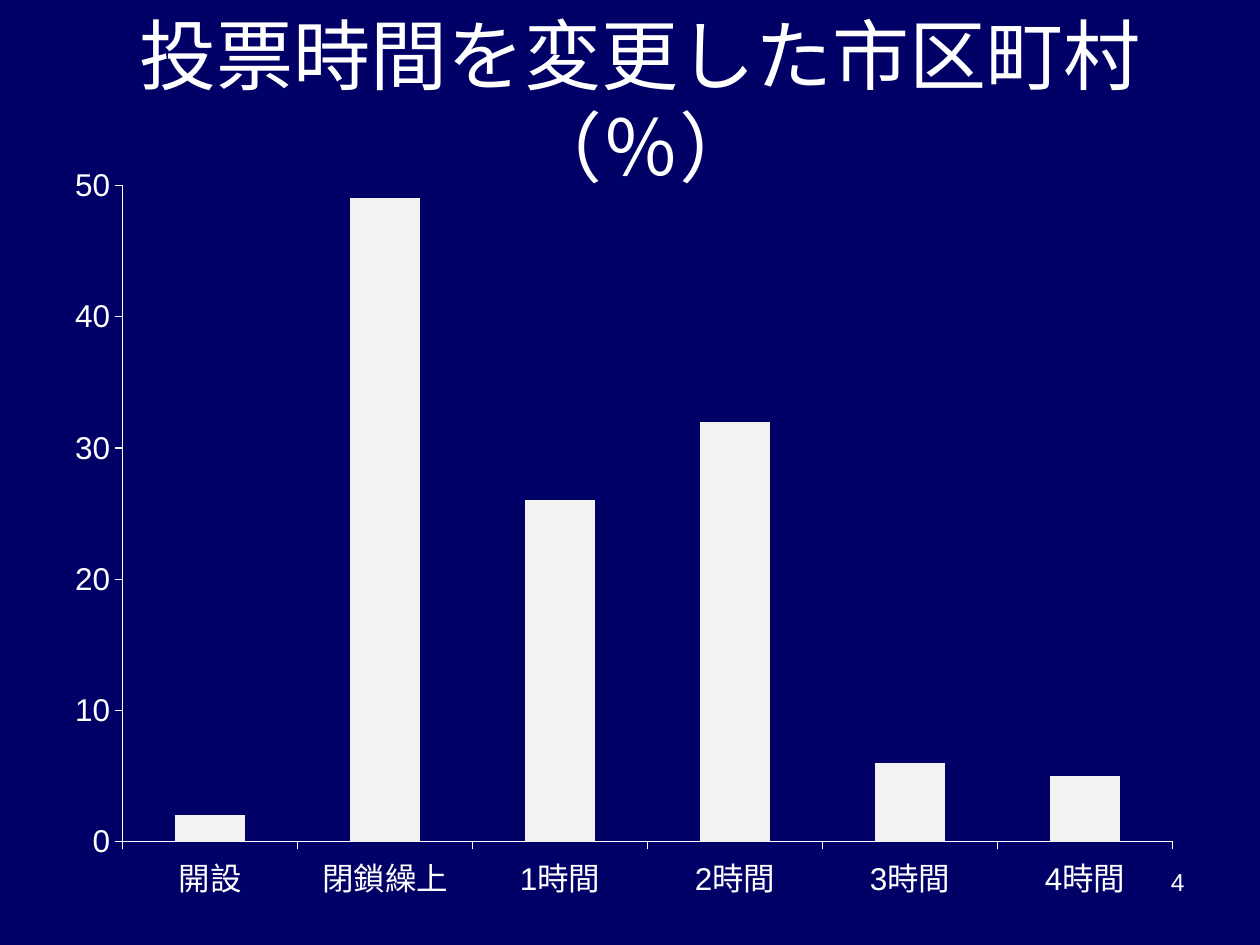
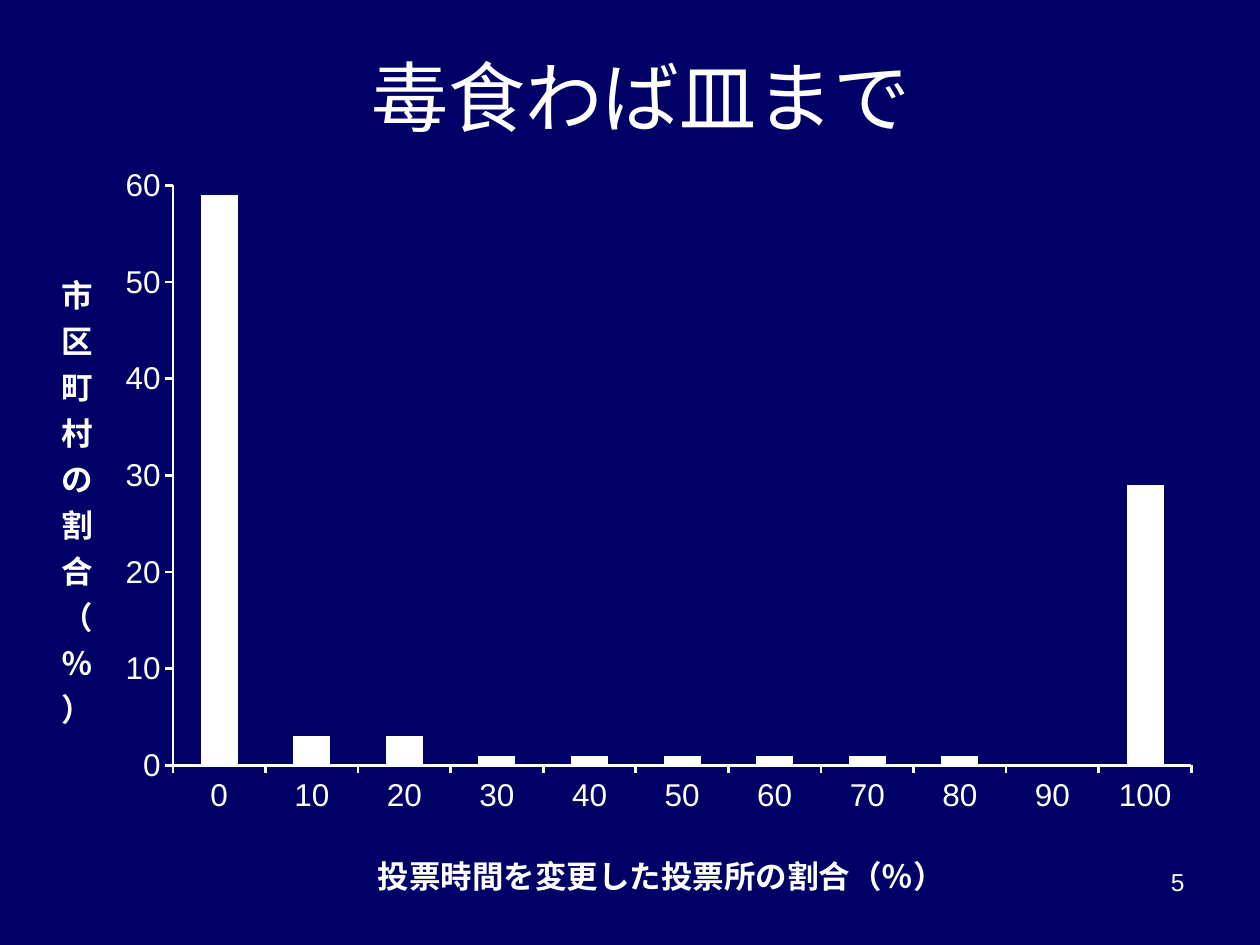
import pptx
import pptx.chart.data
import pptx.dml.color
import pptx.enum.chart
import pptx.enum.text
import pptx.oxml
import pptx.oxml.ns
import pptx.util
from pptx.util import Cm

NAVY = pptx.dml.color.RGBColor(0x00, 0x00, 0x66)
WHITE = pptx.dml.color.RGBColor(0xFF, 0xFF, 0xFF)
PALE_GREY = pptx.dml.color.RGBColor(0xF2, 0xF2, 0xF2)
FONT = "Arial"

# Content: boxes are left, top, width, height in cm; plot and title places are
# fractions of the chart
SLIDES = [
    {
        "title": "投票時間を変更した市区町村（％）",
        "title_box": (1.3, 0.53, 23.24, 2.97),
        "number": "4",
        "chart_box": (1.09, 3.12, 23.01, 15.39),
        "plot": (0.06, 0.04, 0.92, 0.86),
        "bar_color": PALE_GREY,
        "axis_width": 0.75,
        "maximum": 50,
        "values": {"開設": 2, "閉鎖繰上": 49, "1時間": 26,
                   "2時間": 32, "3時間": 6, "4時間": 5},
        "axis_titles": {},
    },
    {
        "title": "毒食わば皿まで",
        "title_box": (1.5, 0.33, 22.86, 3.18),
        "number": "5",
        "chart_box": (0.89, 3.12, 23.6, 15.39),
        "plot": (0.11, 0.04, 0.87, 0.76),
        "bar_color": WHITE,
        "axis_width": 1.5,
        "maximum": 60,
        "values": dict(zip(map(str, range(0, 101, 10)),
                           [59, 3, 3, 1, 1, 1, 1, 1, 1, 0, 29])),
        "axis_titles": {
            "category_axis": ("投票時間を変更した投票所の割合（％）", (0.28, 0.9), "horz"),
            "value_axis": ("市区町村の割合（％）", (0.01, 0.14), "wordArtVert"),
        },
    },
]
NUMBER_BOX = (18.21, 17.35, 5.92, 1.32)


def apply(target, formats):
    for name, value in formats.items():
        setattr(target, name, value)


def style_font(font, size, bold=False):
    apply(font, {"name": FONT, "size": pptx.util.Pt(size), "bold": bold})
    font.color.rgb = WHITE


def add_text(slide, box, text, size, alignment, anchor):
    shape = slide.shapes.add_textbox(*map(Cm, box))
    apply(shape.text_frame, {"word_wrap": True, "vertical_anchor": anchor})
    paragraph = shape.text_frame.paragraphs[0]
    apply(paragraph, {"text": text, "alignment": alignment})
    style_font(paragraph.runs[0].font, size)


def set_layout(element, index, place, inner=False):
    """Fix the position (and size, if given) of a chart part."""
    for old in element.findall(pptx.oxml.ns.qn("c:layout")):
        element.remove(old)
    target = '<c:layoutTarget val="inner"/>' if inner else ""
    modes = '<c:xMode val="edge"/><c:yMode val="edge"/>'
    sizes = "".join(f'<c:{key} val="{value}"/>' for key, value in zip("xywh", place))
    element.insert(index, pptx.oxml.parse_xml(
        f'<c:layout {pptx.oxml.ns.nsdecls("c")}><c:manualLayout>'
        f"{target}{modes}{sizes}</c:manualLayout></c:layout>"))


def add_axis_title(axis, text, place, direction):
    frame = axis.axis_title.text_frame
    frame.text = text
    style_font(frame.paragraphs[0].runs[0].font, 18, bold=True)
    body = frame._txBody.find(pptx.oxml.ns.qn("a:bodyPr"))
    body.set("rot", "0")
    body.set("vert", direction)
    set_layout(axis.axis_title._element, 1, place)


def add_column_chart(slide, content):
    data = pptx.chart.data.CategoryChartData()
    data.categories = list(content["values"])
    data.add_series("Series 1", list(content["values"].values()))
    chart = slide.shapes.add_chart(
        pptx.enum.chart.XL_CHART_TYPE.COLUMN_CLUSTERED,
        *map(Cm, content["chart_box"]), data).chart
    apply(chart, {"has_legend": False, "has_title": False})
    style_font(chart.font, 18)

    # Columns
    plot = chart.plots[0]
    apply(plot, {"gap_width": 150, "vary_by_categories": False})
    fill = plot.series[0].format.fill
    fill.solid()
    fill.fore_color.rgb = content["bar_color"]
    set_layout(chart._chartSpace.chart.plotArea, 0, content["plot"], inner=True)

    # Axes
    apply(chart.value_axis, {"minimum_scale": 0, "major_unit": 10,
                             "maximum_scale": content["maximum"]})
    for axis in (chart.category_axis, chart.value_axis):
        apply(axis, {"has_major_gridlines": False,
                     "major_tick_mark": pptx.enum.chart.XL_TICK_MARK.OUTSIDE,
                     "minor_tick_mark": pptx.enum.chart.XL_TICK_MARK.NONE})
        axis.format.line.color.rgb = WHITE
        axis.format.line.width = pptx.util.Pt(content["axis_width"])
        style_font(axis.tick_labels.font, 18)
    for name, title in content["axis_titles"].items():
        add_axis_title(getattr(chart, name), *title)


def add_slide(presentation, content):
    slide = presentation.slides.add_slide(presentation.slide_layouts[6])
    slide.background.fill.solid()
    slide.background.fill.fore_color.rgb = NAVY
    align, anchor = pptx.enum.text.PP_ALIGN, pptx.enum.text.MSO_ANCHOR
    add_column_chart(slide, content)
    add_text(slide, content["title_box"], content["title"], 44,
             align.CENTER, anchor.MIDDLE)
    add_text(slide, NUMBER_BOX, content["number"], 14, align.RIGHT, anchor.TOP)


def main():
    presentation = pptx.Presentation()
    apply(presentation, {"slide_width": Cm(25.4), "slide_height": Cm(19.05)})
    for content in SLIDES:
        add_slide(presentation, content)
    presentation.save("out.pptx")


if __name__ == "__main__":
    main()
